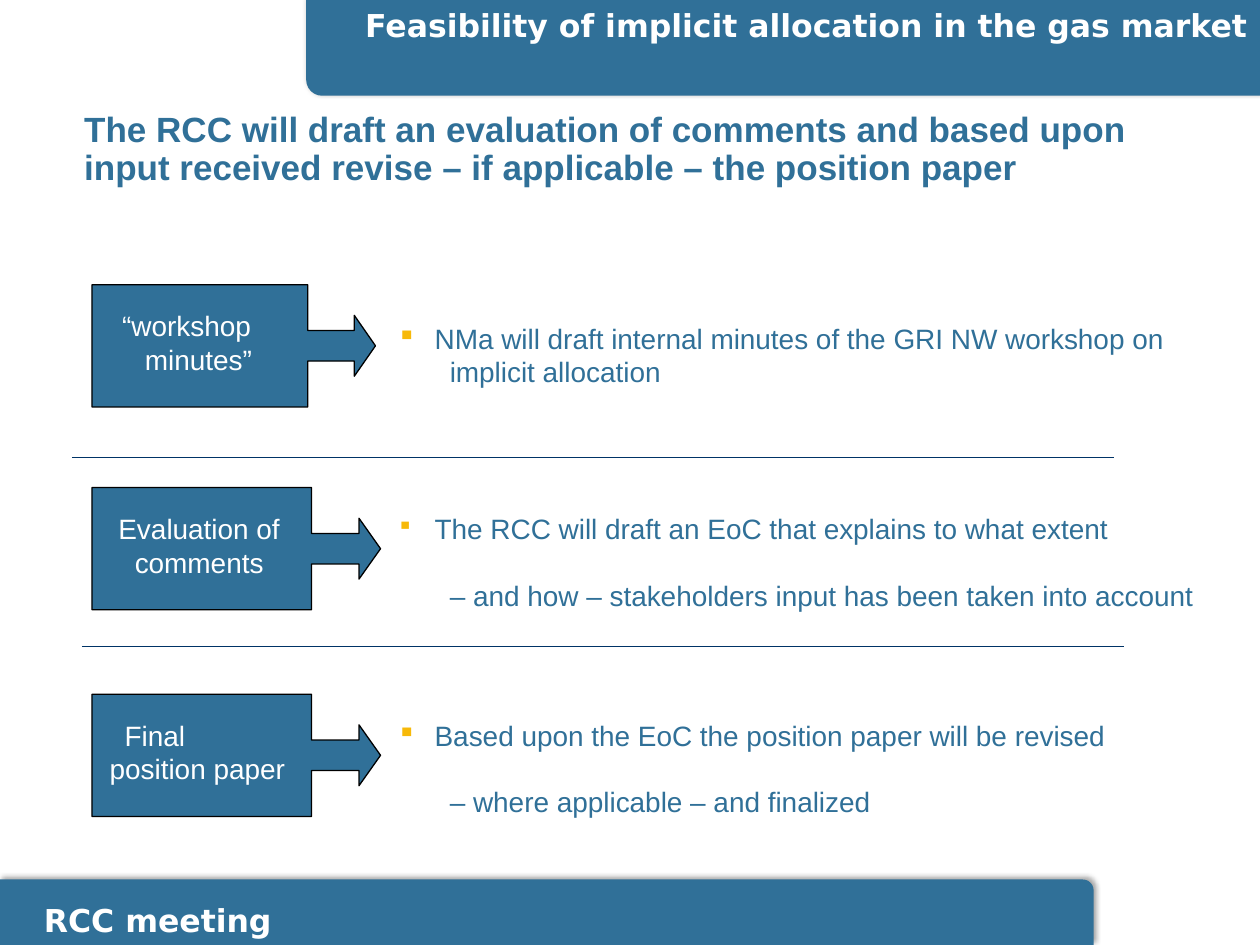
from lxml.etree import SubElement
from pptx import Presentation
from pptx.dml.color import RGBColor
from pptx.enum.shapes import MSO_CONNECTOR, MSO_SHAPE
from pptx.enum.text import MSO_ANCHOR, PP_ALIGN
from pptx.oxml.ns import qn
from pptx.util import Inches, Pt

COLORS = {"blue": "307098", "navy": "003366", "gold": "F7B909",
          "white": "FFFFFF", "black": "000000"}
BODY_FONT, BAND_FONT = "Arial", "DejaVu Sans"

# Callout: top, width, head length; label: left, width, (line, indent) pairs;
# note: width, bullet size in %, gap before its second line in points, lines
STEPS = [
    (2.26, 2.25, 0.173, 0.57, 2.01, [("“workshop", 0.40), ("minutes”", 0.58)],
     6.43, 95, 0, ["NMa will draft internal minutes of the GRI NW workshop on",
                   "implicit allocation"]),
    (3.87, 2.29, 0.176, 0.47, 2.23, [("Evaluation of", 0.47), ("comments", 0.60)],
     6.84, 80, 19, ["The RCC will draft an EoC that explains to what extent",
                    "– and how – stakeholders input has been taken into account"]),
    (5.51, 2.29, 0.176, 0.73, 1.68, [("Final", 0.26), ("position paper", 0.14)],
     6.43, 95, 19, ["Based upon the EoC the position paper will be revised",
                    "– where applicable – and finalized"]),
]


def color(name):
    return RGBColor.from_string(COLORS[name])


def add_run(paragraph, text, size, color_name, font=BODY_FONT, bold=False):
    run = paragraph.add_run()
    run.text = text
    run.font.size = Pt(size)
    run.font.name = font
    run.font.bold = bold
    run.font.color.rgb = color(color_name)


def add_text_frame(slide, left, top, width, height, inset=True):
    frame = slide.shapes.add_textbox(
        Inches(left), Inches(top), Inches(width), Inches(height)).text_frame
    frame.word_wrap = True
    if not inset:
        frame.margin_left = frame.margin_right = 0
        frame.margin_top = frame.margin_bottom = 0
    return frame


def set_indent(paragraph, left, first=0.0):
    properties = paragraph._p.get_or_add_pPr()
    properties.set("marL", str(Inches(left)))
    properties.set("indent", str(Inches(first)))
    return properties


def add_bullet(properties, percent):
    bullet_color = SubElement(properties, qn("a:buClr"))
    SubElement(bullet_color, qn("a:srgbClr"), val=COLORS["gold"])
    SubElement(properties, qn("a:buSzPct"), val=str(percent * 1000))
    SubElement(properties, qn("a:buChar"), char="▪")


def add_band(slide, left, top, width, height, rotation=0):
    band = slide.shapes.add_shape(
        MSO_SHAPE.ROUND_1_RECTANGLE,
        Inches(left), Inches(top), Inches(width), Inches(height))
    band.rotation = rotation
    band.fill.solid()
    band.fill.fore_color.rgb = color("blue")
    band.line.fill.background()
    # Soft shadow
    band.shadow.inherit = False
    effects = band._element.spPr.find(qn("a:effectLst"))
    shadow = SubElement(effects, qn("a:outerShdw"), blurRad=str(Pt(3.1)),
                        dist=str(Pt(1.8)), dir=str(306 * 60000))
    shade = SubElement(shadow, qn("a:srgbClr"), val=COLORS["black"])
    SubElement(shade, qn("a:alpha"), val="35000")


def add_separator(slide, left, top):
    separator = slide.shapes.add_connector(
        MSO_CONNECTOR.STRAIGHT, Inches(left), Inches(top),
        Inches(left + 8.27), Inches(top))
    separator.line.color.rgb = color("navy")
    separator.line.width = Pt(0.75)
    SubElement(separator._element.spPr, qn("a:effectLst"))


def add_callout(slide, top, width, head_length):
    callout = slide.shapes.add_shape(
        MSO_SHAPE.RIGHT_ARROW_CALLOUT,
        Inches(0.73), Inches(top), Inches(width), Inches(0.97))
    for index, value in enumerate((0.25, 0.249, head_length, 0.761)):
        callout.adjustments[index] = value
    callout.shadow.inherit = False
    callout.fill.solid()
    callout.fill.fore_color.rgb = color("blue")
    callout.line.color.rgb = color("black")
    callout.line.width = Pt(0.75)


def add_label(slide, left, top, width, lines):
    frame = add_text_frame(slide, left, top, width, 0.54, inset=False)
    for index, (text, indent) in enumerate(lines):
        paragraph = frame.add_paragraph() if index else frame.paragraphs[0]
        set_indent(paragraph, indent)
        add_run(paragraph, text, 16, "white")


def add_note(slide, top, width, bullet_percent, gap, lines):
    frame = add_text_frame(slide, 3.15, top, width, 0.54, inset=False)
    lead, follow = frame.paragraphs[0], frame.add_paragraph()
    add_bullet(set_indent(lead, 0.3, -0.3), bullet_percent)
    set_indent(follow, 0.42)
    follow.space_before = Pt(gap)
    for paragraph, text in zip((lead, follow), lines):
        add_run(paragraph, text, 16, "blue")


def main():
    presentation = Presentation()
    presentation.slide_width, presentation.slide_height = Inches(10), Inches(7.5)
    slide = presentation.slides.add_slide(presentation.slide_layouts[6])

    # Footer and header bands
    add_band(slide, 0, 6.98, 8.68, 0.52)
    add_band(slide, 2.43, 0, 7.57, 0.76, rotation=180)
    footer = add_text_frame(slide, 0.25, 7.1, 4.11, 0.4).paragraphs[0]
    add_run(footer, "RCC meeting", 18, "white", BAND_FONT, bold=True)
    header = add_text_frame(slide, 2.22, 0, 7.78, 0.4).paragraphs[0]
    header.alignment = PP_ALIGN.RIGHT
    add_run(header, "Feasibility of implicit allocation in the gas market",
            18, "white", BAND_FONT, bold=True)

    # Title
    title_frame = add_text_frame(slide, 0.57, 0.86, 8.77, 0.67)
    title_frame.vertical_anchor = MSO_ANCHOR.MIDDLE
    title = title_frame.paragraphs[0]
    title.line_spacing = 0.9
    add_run(title, "The RCC will draft an evaluation of comments and based upon "
            "input received revise – if applicable – the position paper",
            20, "blue", bold=True)

    # Separators between the steps
    add_separator(slide, 0.57, 3.63)
    add_separator(slide, 0.65, 5.13)

    # Steps
    for (top, width, head_length, label_left, label_width, label,
         note_width, bullet_percent, gap, note) in STEPS:
        add_callout(slide, top, width, head_length)
        add_label(slide, label_left, top + 0.19, label_width, label)
        note_top = top + (0.29 if gap == 0 else 0.19)
        add_note(slide, note_top, note_width, bullet_percent, gap, note)

    presentation.save("out.pptx")


if __name__ == "__main__":
    main()
